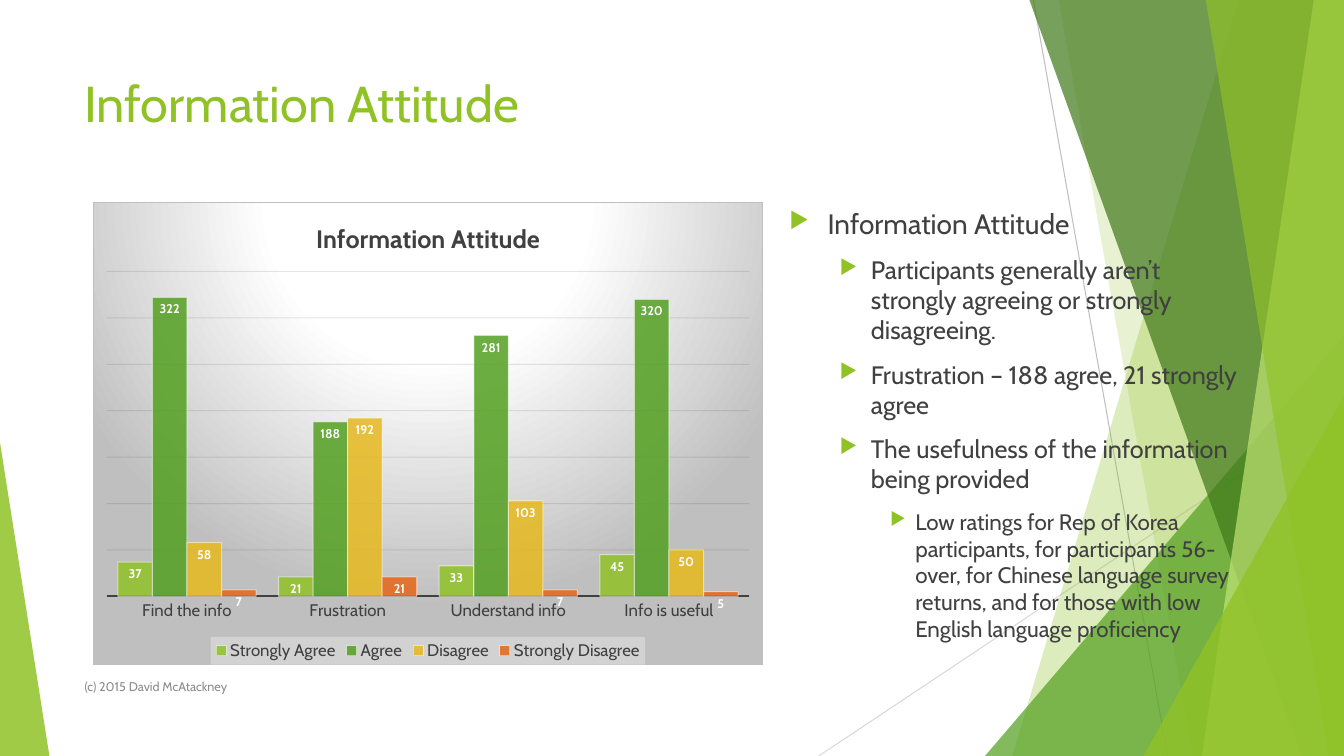
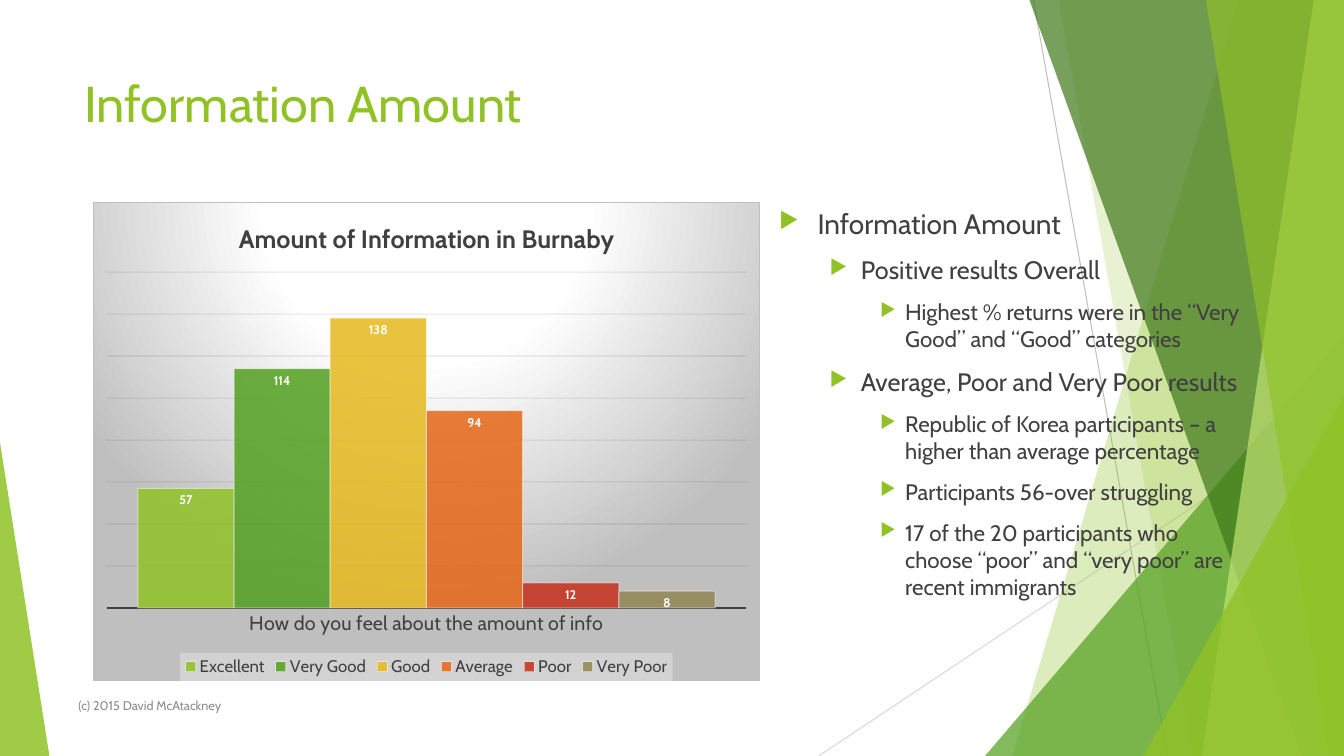
from dataclasses import dataclass

from pptx import Presentation
from pptx.chart.data import CategoryChartData
from pptx.dml.color import RGBColor
from pptx.enum.chart import XL_CHART_TYPE, XL_LABEL_POSITION, XL_LEGEND_POSITION, XL_TICK_MARK
from pptx.enum.shapes import MSO_CONNECTOR, MSO_SHAPE
from pptx.enum.text import MSO_ANCHOR
from pptx.oxml import parse_xml
from pptx.oxml.ns import nsdecls, qn
from pptx.util import Inches, Pt

COLUMNS = XL_CHART_TYPE.COLUMN_CLUSTERED
INSIDE_END = XL_LABEL_POSITION.INSIDE_END
BOTTOM = XL_LEGEND_POSITION.BOTTOM
NO_TICK = XL_TICK_MARK.NONE
STRAIGHT = MSO_CONNECTOR.STRAIGHT
TRIANGLE = MSO_SHAPE.ISOSCELES_TRIANGLE
TOP, MIDDLE = MSO_ANCHOR.TOP, MSO_ANCHOR.MIDDLE

WIDTH, HEIGHT = 13.33, 7.5
FONT = "Cabin"
LIME, GREEN, DARK_GREEN, PALE_LIME = "90C226", "54A021", "3F7819", "C0E474"
INK, MUTED, SILVER, WHITE = "404040", "8C8C8C", "BFBFBF", "FFFFFF"
SERIES_COLOURS = (LIME, GREEN, "E6B91E", "E76618", "C42F1A", "918655")
FOOTER = "(c) 2015 David McAtackney"


@dataclass(frozen=True)
class Ray:
    start: tuple[float, float]
    end: tuple[float, float]
    colour: str


@dataclass(frozen=True)
class Panel:
    """Full-height area from a slanted left edge to the slide's right edge."""
    top_x: float
    bottom_x: float
    colour: str
    alpha: int


@dataclass(frozen=True)
class Wedge:
    """Right triangle standing on the slide's bottom edge."""
    left: float
    top: float
    width: float
    apex: float
    colour: str
    alpha: int


@dataclass(frozen=True)
class Level:
    margin: float
    hanging: float
    size: int


@dataclass(frozen=True)
class Bullet:
    level: int
    text: str


@dataclass(frozen=True)
class ChartSpec:
    title: str
    categories: tuple[str, ...]
    series: dict[str, tuple[int, ...]]
    size: tuple[float, float]
    category_size: int
    maximum: int
    step: int


@dataclass(frozen=True)
class Page:
    title: str
    chart: ChartSpec
    body_left: float
    bullets: tuple[Bullet, ...]
    footer_at: tuple[float, float]


RAYS = (
    Ray((10.25, 0), (11.58, HEIGHT), SILVER),
    Ray((WIDTH, 4.03), (8.12, HEIGHT), "D9D9D9"),
)
FACETS = (
    Panel(12.28, 10.04, LIME, 30),
    Panel(10.5, 11.83, LIME, 20),
    Wedge(9.77, 3.33, 3.56, 1, GREEN, 72),
    Panel(10.21, 12.91, DARK_GREEN, 70),
    Panel(13.03, 11.92, PALE_LIME, 70),
    Panel(11.96, 13.18, LIME, 65),
    Wedge(11.34, 3.93, 1.99, 1, LIME, 80),
    Wedge(0, 4.39, 0.49, 0, LIME, 85),
)
LEVELS = (Level(0.38, 0.38, 20), Level(0.81, 0.31, 18), Level(1.25, 0.25, 16))

PAGES = (
    Page(
        "Information Attitude",
        ChartSpec(
            "Information Attitude",
            ("Find the info", "Frustration", "Understand info", "Info is useful"),
            {
                "Strongly Agree": (37, 21, 33, 45),
                "Agree": (322, 188, 281, 320),
                "Disagree": (58, 192, 103, 50),
                "Strongly Disagree": (7, 21, 7, 5),
            },
            (6.65, 4.6), 12, 350, 50,
        ),
        7.73,
        (
            Bullet(0, "Information Attitude"),
            Bullet(1, "Participants generally aren’t strongly agreeing or strongly disagreeing."),
            Bullet(1, "Frustration – 188 agree, 21 strongly agree"),
            Bullet(1, "The usefulness of the information being provided"),
            Bullet(2, "Low ratings for Rep of Korea participants, for participants 56-over, "
                      "for Chinese language survey returns, and for those with low English "
                      "language proficiency"),
        ),
        (0.74, 6.61),
    ),
    Page(
        "Information Amount",
        ChartSpec(
            "Amount of Information in Burnaby",
            ("How do you feel about the amount of info",),
            {"Excellent": (57,), "Very Good": (114,), "Good": (138,),
             "Average": (94,), "Poor": (12,), "Very Poor": (8,)},
            (6.62, 4.76), 14, 160, 20,
        ),
        7.63,
        (
            Bullet(0, "Information Amount"),
            Bullet(1, "Positive results Overall"),
            Bullet(2, "Highest % returns were in the “Very Good” and “Good” categories"),
            Bullet(1, "Average, Poor and Very Poor results"),
            Bullet(2, "Republic of Korea participants – a higher than average percentage"),
            Bullet(2, "Participants 56-over struggling"),
            Bullet(2, "17 of the 20 participants who choose “poor” and “very poor” "
                      "are recent immigrants"),
        ),
        (0.68, 6.8),
    ),
)


def rgb(colour: str) -> RGBColor:
    return RGBColor.from_string(colour)


def set_font(font, size: int, colour: str, bold: bool = False) -> None:
    font.name, font.size, font.bold = FONT, Pt(size), bold
    font.color.rgb = rgb(colour)


def set_line(line, colour: str, width: float) -> None:
    line.color.rgb = rgb(colour)
    line.width = Pt(width)


def set_alpha(sp_pr, percent: int, fill_parent: str = "") -> None:
    """Make the solid fill of the properties, or of a child such as a:ln, translucent."""
    owner = sp_pr.find(qn(fill_parent)) if fill_parent else sp_pr
    colour = owner.find(f"{qn('a:solidFill')}/{qn('a:srgbClr')}")
    colour.append(parse_xml(f'<a:alpha {nsdecls("a")} val="{percent * 1000}"/>'))


def draw_facet(slide, facet: Panel | Wedge) -> None:
    if isinstance(facet, Panel):
        builder = slide.shapes.build_freeform(Inches(facet.top_x), 0)
        corners = ((WIDTH, 0), (WIDTH, HEIGHT), (facet.bottom_x, HEIGHT))
        builder.add_line_segments([(Inches(x), Inches(y)) for x, y in corners], close=True)
        sp = builder.convert_to_shape()
    else:
        sp = slide.shapes.add_shape(TRIANGLE, Inches(facet.left), Inches(facet.top),
                                    Inches(facet.width), Inches(HEIGHT - facet.top))
        sp.adjustments[0] = facet.apex
    sp.shadow.inherit = False
    sp.line.fill.background()
    sp.fill.solid()
    sp.fill.fore_color.rgb = rgb(facet.colour)
    set_alpha(sp.element.spPr, facet.alpha)


def draw_backdrop(slide) -> None:
    for ray in RAYS:
        line = slide.shapes.add_connector(STRAIGHT, *map(Inches, ray.start + ray.end))
        set_line(line.line, ray.colour, 0.75)
        line.element.spPr.append(parse_xml(f'<a:effectLst {nsdecls("a")}/>'))
    for facet in FACETS:
        draw_facet(slide, facet)


def add_text_frame(slide, box: tuple[float, ...], anchor=TOP):
    tf = slide.shapes.add_textbox(*map(Inches, box)).text_frame
    tf.word_wrap = True
    tf.vertical_anchor = anchor
    return tf


def add_run(p, text: str, size: int, colour: str, bold: bool = False) -> None:
    r = p.add_run()
    r.text = text
    set_font(r.font, size, colour, bold)


def add_bullets(slide, left: float, bullets: tuple[Bullet, ...]) -> None:
    tf = add_text_frame(slide, (left, 2, 12.42 - left, 4.76))
    for i, bullet in enumerate(bullets):
        p = tf.add_paragraph() if i else tf.paragraphs[0]
        level = LEVELS[bullet.level]
        p.level = bullet.level
        p.space_before = Pt(10)
        p_pr = p._p.get_or_add_pPr()
        p_pr.set("marL", str(Inches(level.margin)))
        p_pr.set("indent", str(-Inches(level.hanging)))
        for xml in (f'<a:buClr {nsdecls("a")}><a:srgbClr val="{LIME}"/></a:buClr>',
                    f'<a:buSzPct {nsdecls("a")} val="80000"/>',
                    f'<a:buChar {nsdecls("a")} char="▶"/>'):
            p_pr.append(parse_xml(xml))
        add_run(p, bullet.text, level.size, INK)


def add_background(owner, content: str) -> None:
    """Give a chart part, whose text style is already set, a fill and outline."""
    sp_pr = parse_xml(f'<c:spPr {nsdecls("c", "a")}>{content}</c:spPr>')
    owner.find(qn("c:txPr")).addprevious(sp_pr)


def add_column_chart(slide, spec: ChartSpec) -> None:
    data = CategoryChartData()
    data.categories = spec.categories
    for name, values in spec.series.items():
        data.add_series(name, values)
    chart = slide.shapes.add_chart(COLUMNS, Inches(0.92), Inches(2),
                                   *map(Inches, spec.size), data).chart
    set_font(chart.font, 10, "000000")
    stops = "".join(f'<a:gs pos="{pos * 1000}"><a:srgbClr val="{colour}"/></a:gs>'
                    for pos, colour in ((0, WHITE), (39, WHITE), (100, SILVER)))
    add_background(chart.element, (
        f'<a:gradFill><a:gsLst>{stops}</a:gsLst><a:path path="circle">'
        '<a:fillToRect l="50000" t="-80000" r="50000" b="180000"/></a:path></a:gradFill>'
        f'<a:ln w="{Pt(0.75)}"><a:solidFill><a:srgbClr val="{SILVER}"/></a:solidFill></a:ln>'))

    chart.has_title = True
    add_run(chart.chart_title.text_frame.paragraphs[0], spec.title, 18, INK, bold=True)

    chart.has_legend = True
    chart.legend.position = BOTTOM
    chart.legend.include_in_layout = False
    set_font(chart.legend.font, 12, INK)
    add_background(chart.element.find(f".//{qn('c:legend')}"), (
        '<a:solidFill><a:srgbClr val="F2F2F2"><a:alpha val="39000"/></a:srgbClr></a:solidFill>'))

    axis = chart.category_axis
    axis.major_tick_mark = axis.minor_tick_mark = NO_TICK
    set_font(axis.tick_labels.font, spec.category_size, INK)
    set_line(axis.format.line, INK, 1.5)

    scale = chart.value_axis
    scale.visible = False
    scale.minimum_scale, scale.maximum_scale, scale.major_unit = 0, spec.maximum, spec.step
    set_line(scale.major_gridlines.format.line, "0D0D0D", 0.75)
    grid = chart.element.find(f".//{qn('c:majorGridlines')}/{qn('c:spPr')}")
    set_alpha(grid, 10, "a:ln")

    plot = chart.plots[0]
    plot.gap_width, plot.overlap, plot.vary_by_categories = 65, 0, False
    for series, colour in zip(plot.series, SERIES_COLOURS):
        series.format.fill.solid()
        series.format.fill.fore_color.rgb = rgb(colour)
        set_line(series.format.line, WHITE, 0.75)
        labels = series.data_labels
        labels.show_value = True
        labels.position = INSIDE_END
        set_font(labels.font, 9, WHITE, bold=True)
    for sp_pr in chart.element.findall(f".//{qn('c:ser')}/{qn('c:spPr')}"):
        set_alpha(sp_pr, 85)
        set_alpha(sp_pr, 50, "a:ln")


def add_page(prs, page: Page) -> None:
    slide = prs.slides.add_slide(prs.slide_layouts[6])
    draw_backdrop(slide)
    title = add_text_frame(slide, (0.74, 0.67, 9.4, 1.44))
    add_run(title.paragraphs[0], page.title, 36, LIME)
    add_column_chart(slide, page.chart)
    add_bullets(slide, page.body_left, page.bullets)
    footer = add_text_frame(slide, (*page.footer_at, 6.89, 0.4), MIDDLE)
    add_run(footer.paragraphs[0], FOOTER, 9, MUTED)


def main() -> None:
    prs = Presentation()
    prs.slide_width, prs.slide_height = Inches(WIDTH), Inches(HEIGHT)
    for page in PAGES:
        add_page(prs, page)
    prs.save("out.pptx")


if __name__ == "__main__":
    main()
